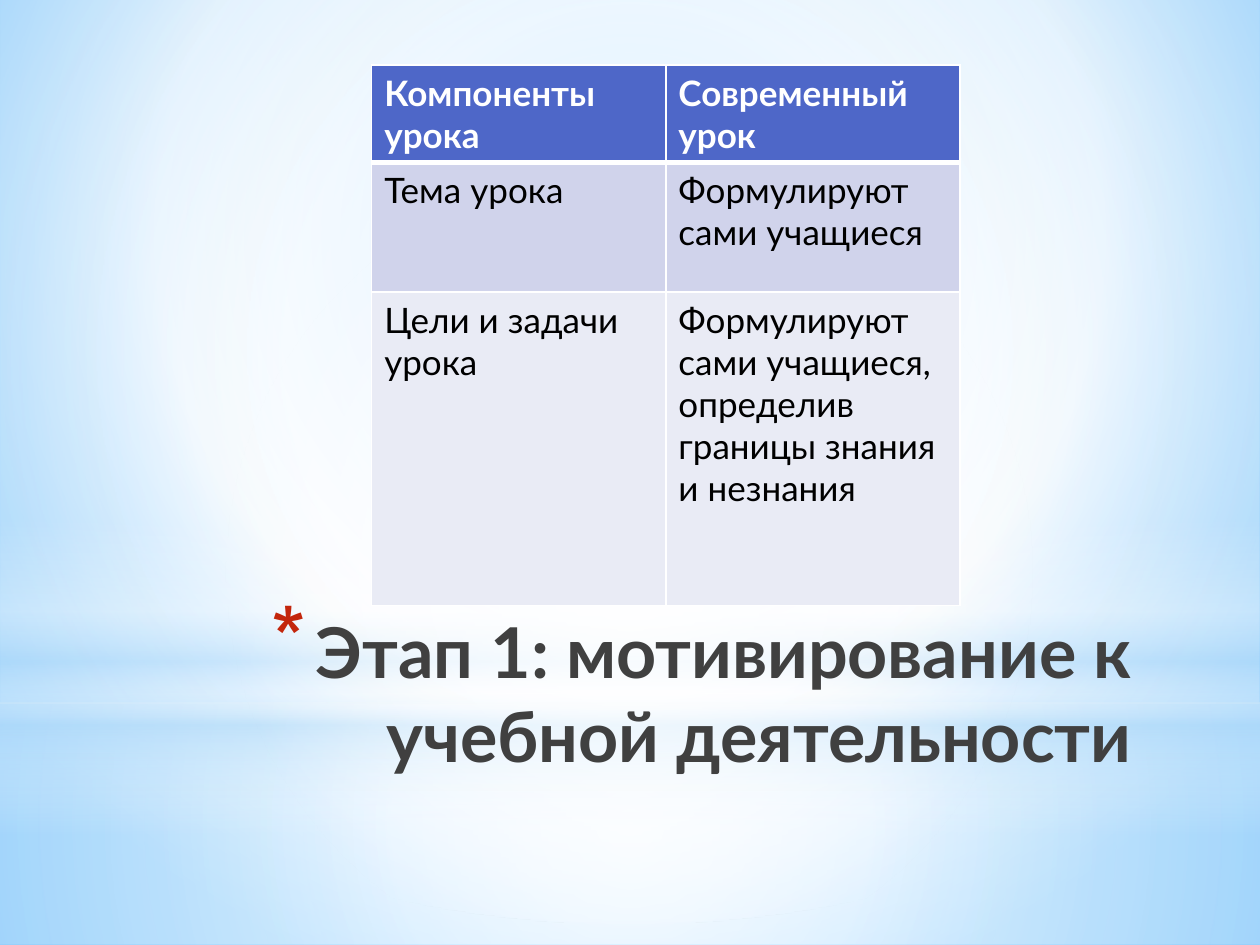
from pptx import Presentation
from pptx.dml.color import RGBColor as Rgb
from pptx.enum.shapes import MSO_SHAPE as Kind
from pptx.enum.text import MSO_ANCHOR as Anchor, MSO_AUTO_SIZE as Fit, PP_ALIGN as Align
from pptx.oxml import parse_xml
from pptx.oxml.ns import nsdecls, qn
from pptx.util import Inches, Pt

WHITE = Rgb(0xFF, 0xFF, 0xFF)
BLACK = Rgb(0, 0, 0)
GREY = Rgb(0x40, 0x40, 0x40)
RED = Rgb(0xC3, 0x26, 0x0C)
NAVY = Rgb(0x4E, 0x67, 0xC8)
LILAC = Rgb(0xD0, 0xD3, 0xEB)
PALE = Rgb(0xE9, 0xEB, 0xF5)
SKY = Rgb(0xB4, 0xDC, 0xFA)
LIGHT = Rgb(0x9E, 0xD5, 0xFF)
BLUE = Rgb(0x5B, 0xB9, 0xFF)

HEAD = {"name": "Lato", "size": Pt(40), "bold": True}
CELL = {"name": "Lato", "size": Pt(20)}
MID = (50, 50, 50, 50)


def tag(text):
    return parse_xml(text.replace(" ", f" {nsdecls('a')} ", 1))


def dress(font, style, color):
    for key, value in style.items():
        setattr(font, key, value)
    font.color.rgb = color


def blend(stops, focus=None):
    marks = "".join(
        f'<a:gs pos="{pos * 1000}"><a:srgbClr val="{color}">'
        f'<a:alpha val="{alpha * 1000}"/></a:srgbClr></a:gs>'
        for pos, color, alpha in stops)
    way = '<a:lin ang="5400000" scaled="0"/>'
    if focus:
        sides = " ".join(f'{side}="{part * 1000}"' for side, part in zip("ltrb", focus))
        way = f'<a:path path="circle"><a:fillToRect {sides}/></a:path>'
    return tag(f'<a:gradFill rotWithShape="1"><a:gsLst>{marks}</a:gsLst>{way}</a:gradFill>')


class Deck:
    """Holds the style, the file and the current slide, measured in shares of its size."""

    def __init__(self, wide, high):
        self.file = Presentation()
        self.file.slide_width, self.file.slide_height = Inches(wide), Inches(high)
        self.slide = self.file.slides.add_slide(self.file.slide_layouts[5])
        self.shapes = self.slide.shapes

    def box(self, left, top, wide, high):
        w, h = self.file.slide_width, self.file.slide_height
        return [round(n) for n in (left * w, top * h, wide * w, high * h)]

    def swap(self, fill, root, grad):
        fill.background()
        old = root.find(qn("a:noFill"))
        root.replace(old, grad)

    def back(self, stops, focus):
        fill = self.slide.background.fill
        fill.background()
        root = self.slide.element.find(".//" + qn("p:bgPr"))
        self.swap(fill, root, blend(stops, focus))

    def glow(self, kind, area, stops, focus=None):
        shape = self.shapes.add_shape(kind, *self.box(*area))
        shape.shadow.inherit = False
        self.swap(shape.fill, shape.element.spPr, blend(stops, focus))
        shape.line.fill.background()

    def title(self, text, area):
        head = self.shapes.title
        head.left, head.top, head.width, head.height = self.box(*area)
        self.shapes.element.append(head.element)
        frame = head.text_frame
        for key, value in {"text": text, "word_wrap": True, "auto_size": Fit.NONE,
                           "vertical_anchor": Anchor.TOP}.items():
            setattr(frame, key, value)
        para = frame.paragraphs[0]
        para.alignment = Align.RIGHT
        props = para._p.get_or_add_pPr()
        props.set("marL", str(Inches(0.35)))
        props.set("indent", str(-Inches(0.35)))
        for part in (f'<a:buClr ><a:srgbClr val="{RED}"/></a:buClr>',
                     '<a:buSzPct val="128000"/>', '<a:buChar char="*"/>'):
            props.append(tag(part))
        dress(para.runs[0].font, HEAD, GREY)

    def edge(self, cell, low):
        props = cell._tc.get_or_add_tcPr()
        for spot, (side, width) in enumerate(zip("LRTB", (1, 1, 1, low))):
            props.insert(spot, tag(
                f'<a:ln{side} w="{Pt(width)}"><a:solidFill><a:srgbClr val="{WHITE}"/>'
                f'</a:solidFill></a:ln{side}>'))

    def table(self, rows, area, parts, looks):
        box = self.box(*area)
        grid = self.shapes.add_table(len(rows), len(rows[0]), *box).table
        for r, (words, part, (fill, color, bold, low)) in enumerate(zip(rows, parts, looks)):
            grid.rows[r].height = round(box[3] * part / sum(parts))
            for c, text in enumerate(words):
                cell = grid.cell(r, c)
                cell.text = text
                cell.fill.solid()
                cell.fill.fore_color.rgb = fill
                self.edge(cell, low)
                dress(cell.text_frame.paragraphs[0].runs[0].font, {**CELL, "bold": bold}, color)


def main():
    deck = Deck(10, 7.5)
    deck.back([(0, LIGHT, 100), (60, WHITE, 100), (100, BLUE, 100)], (20, 10, 20, 60))
    split = 0.744
    deck.glow(Kind.RECTANGLE, (0, split, 1, 1 - split),
              [(0, WHITE, 91), (37, WHITE, 76), (100, SKY, 79)], MID)
    deck.glow(Kind.RECTANGLE, (0, 0, 1, split),
              [(0, WHITE, 89), (48, WHITE, 62), (100, SKY, 79)], MID)
    deck.glow(Kind.RECTANGLE, (0, 0.55, 1, 1 / 3),
              [(0, WHITE, 0), (29, WHITE, 30), (45, SKY, 40),
               (55, WHITE, 26), (65, SKY, 60), (100, WHITE, 0)])
    deck.glow(Kind.OVAL, (0, 0.233, 1, split), [(0, WHITE, 100), (56, WHITE, 0)], MID)
    deck.title("Этап 1: мотивирование к учебной деятельности", (0.196, 0.637, 0.712, 0.167))
    deck.table([("Компоненты урока", "Современный урок"),
                ("Тема урока", "Формулируют сами учащиеся"),
                ("Цели и задачи урока",
                 "Формулируют сами учащиеся, определив границы знания и незнания")],
               (0.295, 0.069, 0.467, 0.572), (0.77, 1.03, 2.49),
               [(NAVY, WHITE, True, 3), (LILAC, BLACK, False, 1), (PALE, BLACK, False, 1)])
    deck.file.save("out.pptx")


if __name__ == "__main__":
    main()
